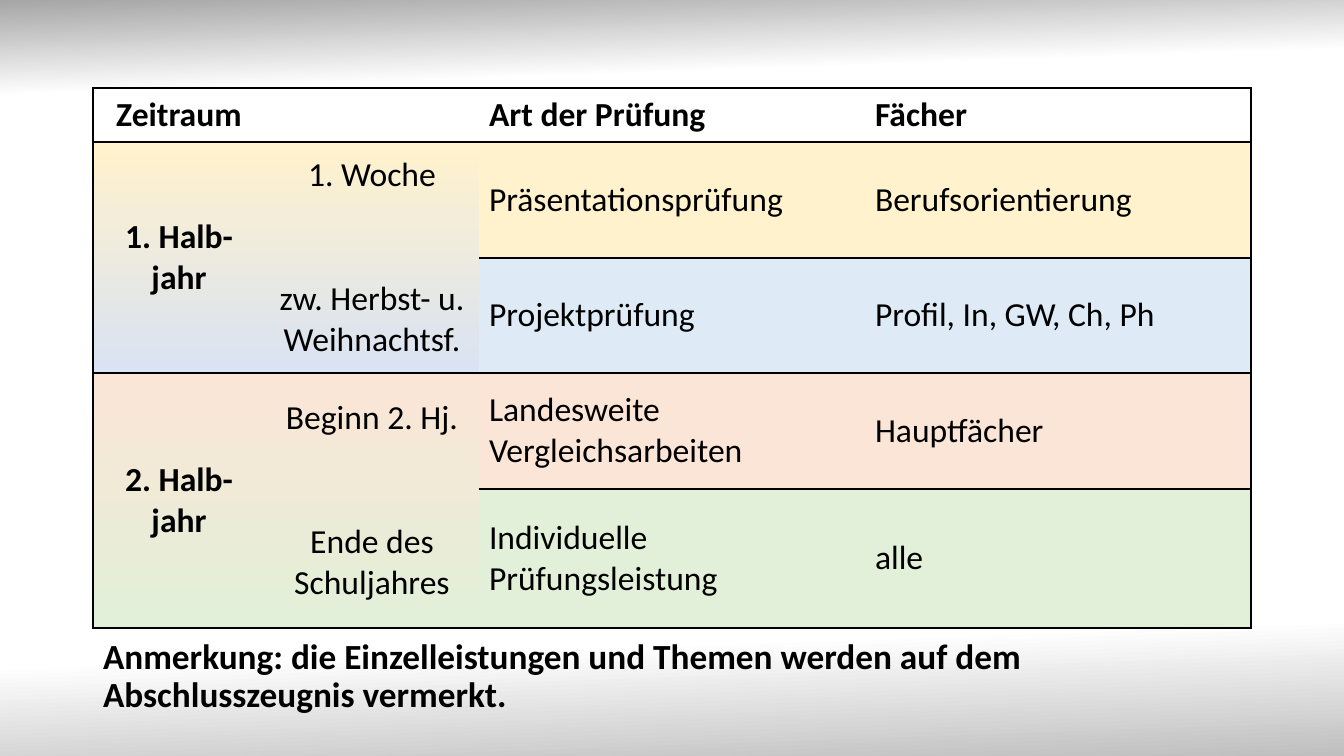
"""Build the exam schedule slide."""
import lxml.etree
import pptx
import pptx.dml.color
import pptx.enum.text
import pptx.oxml.ns
import pptx.util

PX = 914400 / 100.8
QN = pptx.oxml.ns.qn
LEFT = pptx.enum.text.PP_ALIGN.LEFT
CENTER = pptx.enum.text.PP_ALIGN.CENTER
MIDDLE = pptx.enum.text.MSO_ANCHOR.MIDDLE
NO_GRID_STYLE = "{2D5ABB26-0587-4C30-8999-92F81FD0307C}"


def px(length):
    return pptx.util.Emu(round(length * PX))


def color(value):
    return pptx.dml.color.RGBColor.from_string(value)


def write(frame, text, size=24, bold=False, align=LEFT, gap=0, spacing=1.0):
    frame.word_wrap = True
    for index, line in enumerate(text.split("\n")):
        para = frame.add_paragraph() if index else frame.paragraphs[0]
        para.alignment = align
        para.line_spacing = spacing
        para.space_before = pptx.util.Pt(gap if index else 0)
        span = para.add_run()
        span.text = line
        span.font.name = "Calibri"
        span.font.size = pptx.util.Pt(size)
        span.font.bold = bold
        span.font.color.rgb = color("000000")


class SlideBuilder:
    def __init__(self, deck):
        self.ink = "000000"
        self.page = deck.slides.add_slide(deck.slide_layouts[5])

    def gradient(self, fill, owner, stops, angle):
        fill.gradient()
        fill.gradient_angle = 360 - angle
        stop_list = owner.find(".//" + QN("a:gsLst"))
        for stop in list(stop_list):
            stop_list.remove(stop)
        for position, value in stops:
            stop = lxml.etree.SubElement(stop_list, QN("a:gs"), pos=str(position * 1000))
            lxml.etree.SubElement(stop, QN("a:srgbClr"), val=value)

    def background(self, stops, angle):
        self.gradient(self.page.background.fill, self.page._element, stops, angle)

    def title(self, text, left, top, width, height, **style):
        box = self.page.shapes.title
        box.left, box.top, box.width, box.height = map(px, (left, top, width, height))
        box.text_frame.auto_size = pptx.enum.text.MSO_AUTO_SIZE.NONE
        box.text_frame.vertical_anchor = MIDDLE
        write(box.text_frame, text, **style)

    def table(self, left, top, widths, heights):
        frame = self.page.shapes.add_table(
            len(heights), len(widths), px(left), px(top), px(sum(widths)), px(sum(heights)))
        table = frame.table
        table.first_row = table.horz_banding = False
        frame._element.find(".//" + QN("a:tableStyleId")).text = NO_GRID_STYLE
        for column, width in zip(table.columns, widths):
            column.width = px(width)
        for row, height in zip(table.rows, heights):
            row.height = px(height)
        return table

    def cell(self, cell, text, fill, **style):
        cell.vertical_anchor = MIDDLE
        if text:
            write(cell.text_frame, text, **style)
        if isinstance(fill, tuple):
            self.gradient(cell.fill, cell._tc, zip((0, 100), fill), 90)
        else:
            cell.fill.solid()
            cell.fill.fore_color.rgb = color(fill)

    def borders(self, cell, **weights):
        properties = cell._tc.get_or_add_tcPr()
        sides = [side for side in "LRTB" if weights.get(side)]
        for index, side in enumerate(sides):
            line = lxml.etree.Element(
                QN("a:ln" + side), w=str(pptx.util.Pt(weights[side])))
            solid = lxml.etree.SubElement(line, QN("a:solidFill"))
            lxml.etree.SubElement(solid, QN("a:srgbClr"), val=self.ink)
            properties.insert(index, line)


def main():
    deck = pptx.Presentation()
    deck.slide_width, deck.slide_height = px(1344), px(756)
    builder = SlideBuilder(deck)
    builder.background([(0, "A6A6A6"), (12, "FFFFFF"), (83, "FFFFFF"), (100, "BFBFBF")], 88)
    builder.title(
        "Anmerkung: die Einzelleistungen und Themen werden auf dem Abschlusszeugnis vermerkt.",
        93, 636, 1159, 83, size=25.2, bold=True, spacing=0.9)

    schedule = builder.table(93, 88, (172, 214, 386, 386), (54, 116, 115, 116, 139))
    headings = ("Zeitraum", "", "Art der Prüfung", "Fächer")
    for column, heading in enumerate(headings):
        builder.cell(schedule.cell(0, column), heading, "FFFFFF", bold=True,
                     align=LEFT if column else CENTER)

    terms = {
        1: ("1. Halb-jahr", "1. Woche\nzw. Herbst- u. Weihnachtsf.", ("FFF2CC", "DAE3F3")),
        3: ("2. Halb-jahr", "Beginn 2. Hj.\nEnde des Schuljahres", ("FBE5D6", "E2F0D9")),
    }
    for row, (term, periods, fades) in terms.items():
        for column, text in enumerate((term, periods)):
            origin = schedule.cell(row, column)
            origin.merge(schedule.cell(row + 1, column))
            builder.cell(origin, text, fades, bold=column == 0, align=CENTER, gap=59)

    exams = (
        ("Präsentationsprüfung", "Berufsorientierung", "FFF2CC"),
        ("Projektprüfung", "Profil, In, GW, Ch, Ph", "DEEBF7"),
        ("Landesweite Vergleichsarbeiten", "Hauptfächer", "FBE5D6"),
        ("Individuelle Prüfungsleistung", "alle", "E2F0D9"),
    )
    for row, (exam, subjects, fill) in enumerate(exams, 1):
        builder.cell(schedule.cell(row, 2), exam, fill)
        builder.cell(schedule.cell(row, 3), subjects, fill)

    thick, thin = 2.25, 1
    rules = (thick, thick, thin, thick, thin, thick)
    for row in range(5):
        for column in range(4):
            cell = schedule.cell(row, column)
            last = row + 1 if cell.is_merge_origin else row
            builder.borders(
                cell,
                L=thick if column == 0 else 0,
                R=thick if column == 3 else 0,
                T=0 if cell.is_spanned else rules[row],
                B=rules[last + 1])
    deck.save("out.pptx")


if __name__ == "__main__":
    main()
